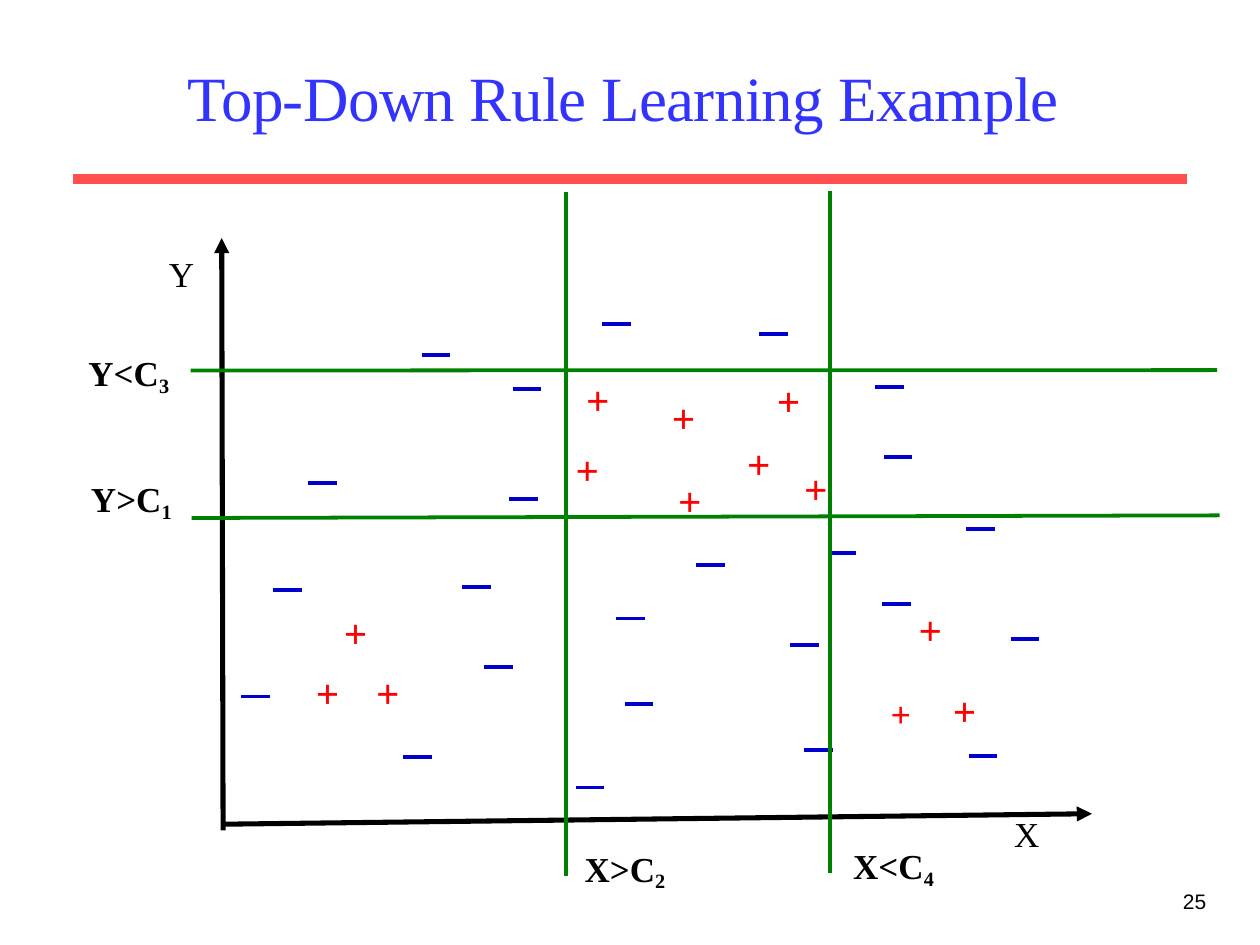
import pptx
import pptx.util
import pptx.dml.color
import pptx.enum.shapes
import pptx.enum.text
import pptx.oxml
import pptx.oxml.ns

Pt = pptx.util.Pt
RGB = pptx.dml.color.RGBColor
BLACK = RGB(0x00, 0x00, 0x00)
TITLE = RGB(0x33, 0x33, 0xFF)
CORAL = RGB(0xFF, 0x50, 0x50)
RED = RGB(0xFF, 0x00, 0x00)
BLUE = RGB(0x00, 0x00, 0xCC)
GREEN = RGB(0x00, 0x80, 0x00)

SERIF = "Times New Roman"
DASH = 16.4
HEAD = (0, 33, 720, 75)
PLOT = (108, 108, 590, 394)

# Offsets from the top left of the plot
MINUS = [
    (236, 77), (326, 83), (133, 95), (392, 113), (185, 114.5), (397, 153),
    (68, 168), (183, 177), (444, 194.5), (365, 208), (290, 215),
    (156, 227.5), (48, 229), (396, 237), (244, 245.5), (469.5, 257),
    (343.5, 260.5), (168.5, 273), (30, 290), (249, 294.5),
    (351.5, 320.5), (445.5, 324), (122.5, 324.5), (221, 342),
]
PLUS = [
    (227, 104.5), (336, 105), (276, 115), (319, 141), (221, 144.5),
    (351.5, 155.5), (279.5, 162), (417, 236), (88.5, 237.5),
    (72.5, 272), (107, 272), (436.5, 282),
]
SMALL = (401, 286)
AXES = [(19.5, 366.5, 18.7, 28), (19.5, 363, 516, 357)]
NAMES = [("Y", -11.5, 35), ("X", 471.5, 355)]
CUTS = [
    (1, 103.7, 587.5, 103.5),
    (1.5, 188, 589, 186.5),
    (215.3, 2, 215.3, 392.5),
    (366.5, 1, 366.5, 391),
]
TESTS = [
    ("Y<C", "3", -57.5, 91.5), ("Y>C", "1", -56, 163.5),
    ("X>C", "2", 226, 374.5), ("X<C", "4", 379.5, 373),
]


def apply(item, values):
    for name, value in values.items():
        setattr(item, name, value)


def add_run(para, text, color, **values):
    run = para.add_run()
    run.text = text
    apply(run.font, values)
    run.font.color.rgb = color
    return run


def set_frame(frame, inset=1.5):
    """Set insets and anchor, and return the first paragraph."""
    apply(frame, {
        "margin_left": 0, "margin_right": 0, "margin_bottom": 0,
        "margin_top": Pt(inset), "word_wrap": False,
        "vertical_anchor": pptx.enum.text.MSO_ANCHOR.TOP,
        "auto_size": pptx.enum.text.MSO_AUTO_SIZE.NONE,
    })
    para = frame.paragraphs[0]
    apply(para, {"alignment": pptx.enum.text.PP_ALIGN.LEFT,
                 "space_before": Pt(1.2)})
    return para


def add_text(slide, x, y, w, h, text, color, **values):
    box = slide.shapes.add_textbox(Pt(x), Pt(y), Pt(w), Pt(h))
    para = set_frame(box.text_frame)
    add_run(para, text, color, **values)
    return para


def add_line(slide, x1, y1, x2, y2, color, width, arrow=False):
    line = slide.shapes.add_connector(
        pptx.enum.shapes.MSO_CONNECTOR.STRAIGHT,
        Pt(x1), Pt(y1), Pt(x2), Pt(y2))
    line.line.color.rgb = color
    line.line.width = Pt(width)
    props = line._element.spPr
    if arrow:
        end = pptx.oxml.parse_xml(
            f'<a:tailEnd {pptx.oxml.ns.nsdecls("a")} type="triangle"/>')
        props.find(pptx.oxml.ns.qn("a:ln")).append(end)
    props.append(pptx.oxml.parse_xml(
        f'<a:effectLst {pptx.oxml.ns.nsdecls("a")}/>'))


def add_head(slide, box):
    """Place the title and the rule below it."""
    left, top, width, height = box
    title = slide.shapes.title
    apply(title, {"left": Pt(left + 107.3), "top": Pt(top),
                  "width": Pt(507.6), "height": Pt(45.4)})
    para = set_frame(title.text_frame, 0.7)
    run = add_run(para, "Top-Down Rule Learning Example", TITLE,
                  name=SERIF, size=Pt(36), bold=False)
    run.font._element.set("spc", "-38")
    y = top + height - 5.7
    add_line(slide, left + 41.8, y, left + width - 41.8, y, CORAL, 5.75)


def add_plot(slide, box):
    """Place the axes, the points, the cuts and their labels."""
    left, top = box[:2]

    def shift(x1, y1, x2, y2):
        return left + x1, top + y1, left + x2, top + y2

    for ends in AXES:
        add_line(slide, *shift(*ends), BLACK, 2.9, arrow=True)
    for text, x, y in NAMES:
        add_text(slide, left + x, top + y, 16.5, 26.5, text, BLACK,
                 name=SERIF, size=Pt(20))
    for (x, y), size in [(spot, 23.5) for spot in PLUS] + [(SMALL, 20.4)]:
        add_text(slide, left + x, top + y, 16, 30, "+", RED,
                 name=SERIF, size=Pt(size), bold=True)
    for x, y in MINUS:
        add_line(slide, *shift(x, y, x + DASH, y), BLUE, 2.16)
    for ends in CUTS:
        add_line(slide, *shift(*ends), GREEN, 2.16)
    for text, sub, x, y in TESTS:
        style = {"name": SERIF, "size": Pt(20), "bold": True}
        para = add_text(slide, left + x, top + y, 49, 27, text, BLACK, **style)
        low = add_run(para, sub, BLACK, **style)
        low.font._element.set("baseline", "-19000")


def main():
    deck = pptx.Presentation()
    apply(deck, {"slide_width": Pt(720), "slide_height": Pt(540)})
    slide = deck.slides.add_slide(deck.slide_layouts[5])
    add_head(slide, HEAD)
    add_plot(slide, PLOT)
    add_text(slide, 676, 506.5, 17, 16, "25", BLACK, name="Arial", size=Pt(12))
    deck.save("out.pptx")


if __name__ == "__main__":
    main()
